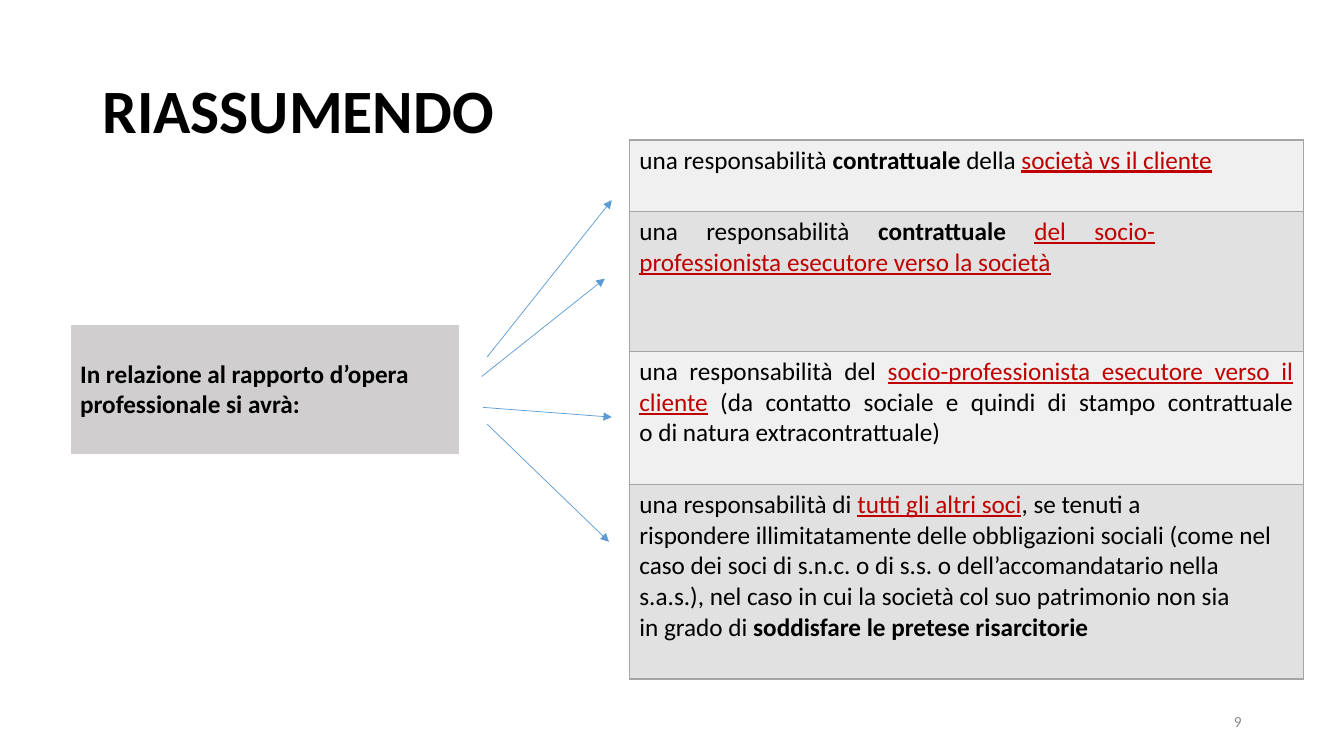
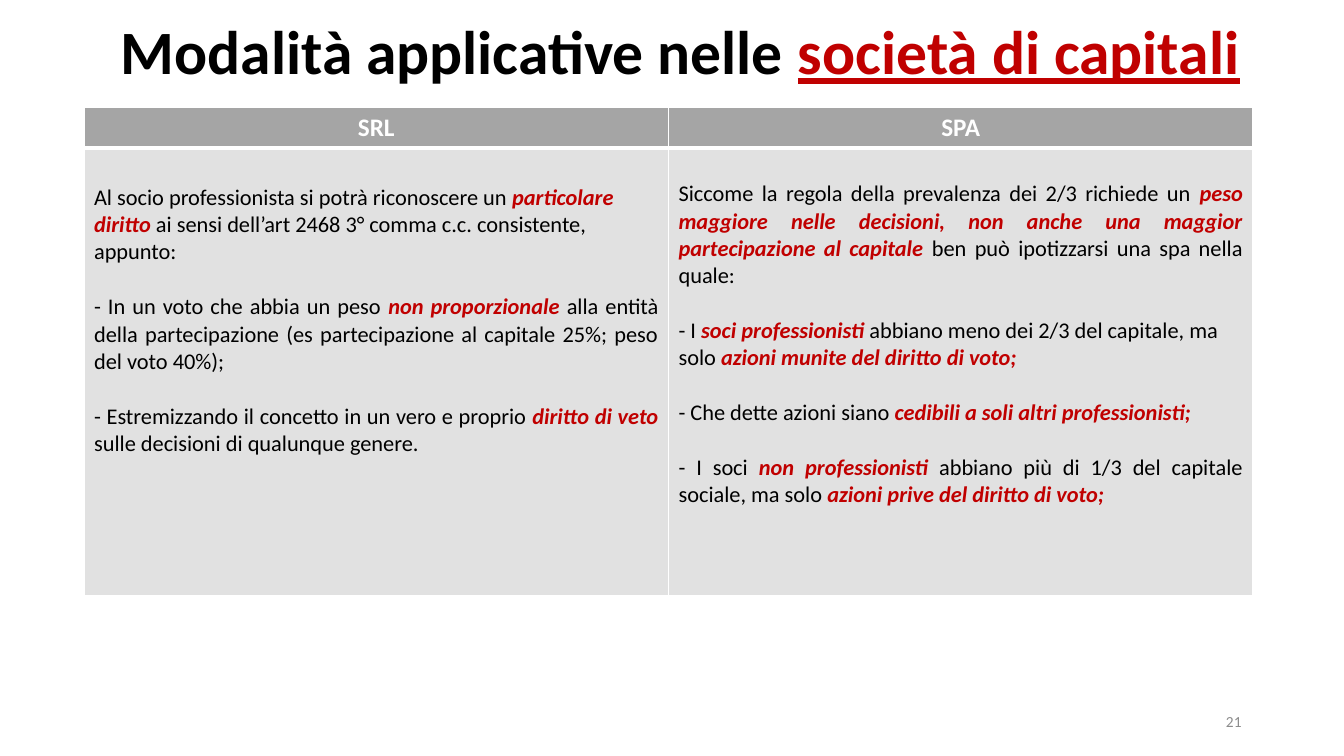
from lxml.etree import SubElement
from pptx import Presentation
from pptx.dml.color import RGBColor
from pptx.enum.shapes import MSO_CONNECTOR
from pptx.enum.text import MSO_ANCHOR, MSO_AUTO_SIZE, PP_ALIGN
from pptx.oxml.ns import qn
from pptx.util import Pt

FONT = "Calibri"
BLACK = RGBColor(0x00, 0x00, 0x00)
WHITE = RGBColor(0xFF, 0xFF, 0xFF)
RED = RGBColor(0xC0, 0x00, 0x00)
BLUE = RGBColor(0x5B, 0x9B, 0xD5)
GRAY = RGBColor(0xA5, 0xA5, 0xA5)
NUMBER_GRAY = RGBColor(0x8C, 0x8C, 0x8C)
BOX_GRAY = RGBColor(0xD0, 0xCE, 0xCE)
LIGHT = RGBColor(0xF0, 0xF0, 0xF0)
MEDIUM = RGBColor(0xE1, 0xE1, 0xE1)

LEFT, RIGHT, CENTER, JUSTIFY = PP_ALIGN.LEFT, PP_ALIGN.RIGHT, PP_ALIGN.CENTER, PP_ALIGN.JUSTIFY

STYLES = {
    "plain": {},
    "bold": {"bold": True},
    "link": {"color": RED, "underline": True},
    "bold link": {"bold": True, "color": RED, "underline": True},
    "key": {"bold": True, "italic": True, "color": RED},
    "header": {"bold": True, "color": WHITE},
    "number": {"color": NUMBER_GRAY},
}

SUMMARY = {
    "title": [("RIASSUMENDO", "bold")],
    "title_at": (66, 29),
    "number": "9",
    "premise": [("In relazione al rapporto d’opera professionale si avrà:", "bold")],
}
LIABILITIES = [
    (51, LEFT, 7.2, [
        ("una responsabilità ", "plain"), ("contrattuale ", "bold"),
        ("della ", "plain"), ("società vs il cliente", "link")]),
    (100, JUSTIFY, 106, [
        ("una responsabilità ", "plain"), ("contrattuale ", "bold"),
        ("del socio-professionista esecutore verso la società", "link")]),
    (95, JUSTIFY, 7.2, [
        ("una responsabilità del ", "plain"),
        ("socio-professionista esecutore verso il cliente", "link"),
        (" (da contatto sociale e quindi di stampo contrattuale\n"
         "o di natura extracontrattuale)", "plain")]),
    (139, LEFT, 7.2, [
        ("una responsabilità di ", "plain"), ("tutti gli altri soci", "link"),
        (", se tenuti a\nrispondere illimitatamente delle obbligazioni sociali (come nel\n"
         "caso dei soci di s.n.c. o di s.s. o dell’accomandatario nella\n"
         "s.a.s.), nel caso in cui la società col suo patrimonio non sia\n"
         "in grado di ", "plain"),
        ("soddisfare le pretese risarcitorie", "bold")]),
]
ARROWS = [
    ((348, 255), (437, 143)),
    ((344, 269), (432, 199)),
    ((345, 291), (437, 298)),
    ((348, 303), (435, 387)),
]

COMPANIES = {
    "title": [("Modalità applicative nelle ", "bold"), ("società di capitali", "bold link")],
    "title_at": (79, -13),
    "number": "21",
}
COMPANY_TYPES = [
    ("SRL", 25.6, [
        (LEFT, [
            ("Al socio professionista si potrà riconoscere un ", "plain"),
            ("particolare diritto ", "key"),
            ("ai sensi dell’art 2468 3° comma c.c. consistente, appunto:", "plain")]),
        (JUSTIFY, [
            ("- In un voto che abbia un peso ", "plain"), ("non proporzionale ", "key"),
            ("alla entità della partecipazione (es partecipazione al capitale 25%; "
             "peso del voto 40%);", "plain")]),
        (JUSTIFY, [
            ("- Estremizzando il concetto in un vero e proprio ", "plain"),
            ("diritto di veto ", "key"),
            ("sulle decisioni di qualunque genere.", "plain")]),
    ]),
    ("SPA", 23.1, [
        (JUSTIFY, [
            ("Siccome la regola della prevalenza dei 2/3 richiede un ", "plain"),
            ("peso maggiore nelle decisioni, non anche una maggior "
             "partecipazione al capitale ", "key"),
            ("ben può ipotizzarsi una spa nella quale:", "plain")]),
        (LEFT, [
            ("- I ", "plain"), ("soci professionisti ", "key"),
            ("abbiano meno dei 2/3 del capitale, ma solo ", "plain"),
            ("azioni munite del diritto di voto;", "key")]),
        (JUSTIFY, [
            ("- Che dette azioni siano ", "plain"),
            ("cedibili a soli altri professionisti;", "key")]),
        (JUSTIFY, [
            ("- I soci ", "plain"), ("non professionisti ", "key"),
            ("abbiano più di 1/3 del capitale sociale, ma solo ", "plain"),
            ("azioni prive del diritto di voto;", "key")]),
    ]),
]


def write(tf, paragraphs, size, gap=0):
    for i, (align, runs) in enumerate(paragraphs):
        p = tf.paragraphs[0] if i == 0 else tf.add_paragraph()
        p.alignment = align
        p.space_before = Pt(gap if i else 0)
        for text, style in runs:
            look = STYLES[style]
            for n, line in enumerate(text.split("\n")):
                if n:
                    p.add_line_break()
                r = p.add_run()
                r.text = line
                f = r.font
                f.name, f.size = FONT, Pt(size)
                f.bold = look.get("bold", False)
                f.italic = look.get("italic", False)
                f.underline = look.get("underline", False)
                f.color.rgb = look.get("color", BLACK)


def add_slide(prs, content):
    slide = prs.slides.add_slide(prs.slide_layouts[5])
    title = slide.shapes.title
    x, y = content["title_at"]
    title.left, title.top, title.width, title.height = Pt(x), Pt(y), Pt(828), Pt(104)
    tf = title.text_frame
    tf.auto_size = MSO_AUTO_SIZE.NONE
    tf.vertical_anchor = MSO_ANCHOR.MIDDLE
    write(tf, [(LEFT, content["title"])], 44)
    tf.paragraphs[0].line_spacing = 0.9

    number = slide.shapes.add_textbox(Pt(678), Pt(500.5), Pt(216), Pt(29))
    tf = number.text_frame
    tf.word_wrap = True
    tf.vertical_anchor = MSO_ANCHOR.MIDDLE
    write(tf, [(RIGHT, [(content["number"], "number")])], 11)
    return slide


def add_table(slide, x, y, widths, heights):
    frame = slide.shapes.add_table(len(heights), len(widths), Pt(x), Pt(y),
                                   Pt(sum(widths)), Pt(sum(heights)))
    table = frame.table
    table.horz_banding = False
    for column, width in zip(table.columns, widths):
        column.width = Pt(width)
    for row, height in zip(table.rows, heights):
        row.height = Pt(height)
    return table


def style_cell(cell, fill, border, top=1, bottom=1):
    tc_pr = cell._tc.get_or_add_tcPr()
    for side, width in (("L", 1), ("R", 1), ("T", top), ("B", bottom)):
        ln = SubElement(tc_pr, qn(f"a:ln{side}"), w=str(Pt(width)))
        solid = SubElement(ln, qn("a:solidFill"))
        SubElement(solid, qn("a:srgbClr"), val=str(border))
    cell.fill.solid()
    cell.fill.fore_color.rgb = fill


def add_arrow(slide, start, end):
    line = slide.shapes.add_connector(MSO_CONNECTOR.STRAIGHT,
                                      *(Pt(v) for v in start + end))
    line.line.color.rgb = BLUE
    line.line.width = Pt(0.5)
    SubElement(line.line._get_or_add_ln(), qn("a:tailEnd"), type="triangle")
    SubElement(line._element.spPr, qn("a:effectLst"))


def build_summary(prs):
    slide = add_slide(prs, SUMMARY)
    premise = add_table(slide, 50, 232, [278], [93]).cell(0, 0)
    style_cell(premise, BOX_GRAY, WHITE)
    premise.vertical_anchor = MSO_ANCHOR.MIDDLE
    write(premise.text_frame, [(LEFT, SUMMARY["premise"])], 18)

    heights = [row[0] for row in LIABILITIES]
    table = add_table(slide, 449.5, 100, [481.5], heights)
    for i, (_, align, margin, runs) in enumerate(LIABILITIES):
        cell = table.cell(i, 0)
        style_cell(cell, MEDIUM if i % 2 else LIGHT, GRAY)
        cell.margin_right = Pt(margin)
        write(cell.text_frame, [(align, runs)], 18)

    for start, end in ARROWS:
        add_arrow(slide, start, end)


def build_companies(prs):
    slide = add_slide(prs, COMPANIES)
    table = add_table(slide, 60, 76.5, [417.5] * len(COMPANY_TYPES), [29.2, 320])
    for col, (name, margin, paragraphs) in enumerate(COMPANY_TYPES):
        header, body = table.cell(0, col), table.cell(1, col)
        style_cell(header, GRAY, WHITE, bottom=3)
        write(header.text_frame, [(CENTER, [(name, "header")])], 18)
        style_cell(body, MEDIUM, WHITE, top=3)
        body.margin_top = Pt(margin)
        write(body.text_frame, paragraphs, 16, gap=19.5)


def main():
    prs = Presentation()
    prs.slide_width, prs.slide_height = Pt(960), Pt(540)
    build_summary(prs)
    build_companies(prs)
    prs.save("out.pptx")


if __name__ == "__main__":
    main()
